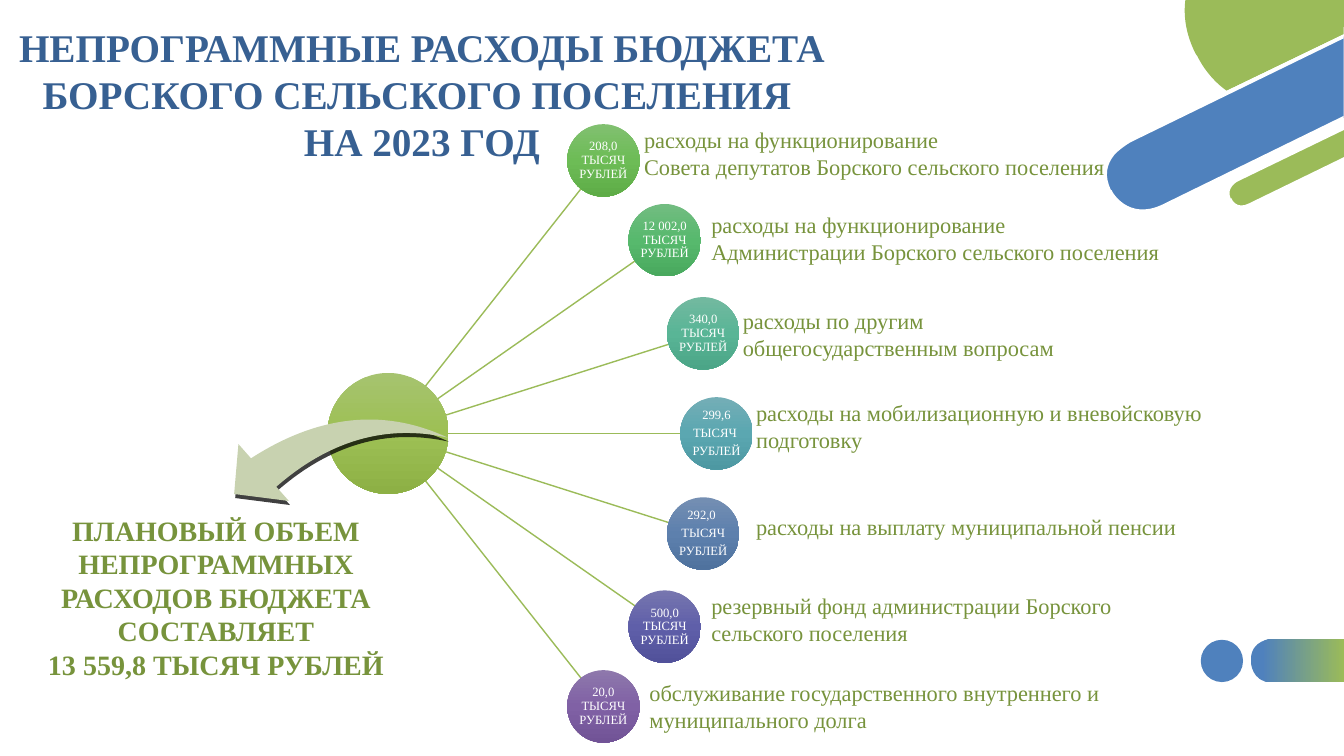
import pptx
import pptx.dml.color
import pptx.enum.shapes
import pptx.enum.text
import pptx.oxml
import pptx.oxml.ns
import pptx.util

Pt = pptx.util.Pt
SHAPE = pptx.enum.shapes.MSO_SHAPE
ALIGN = pptx.enum.text.PP_ALIGN
ANCHOR = pptx.enum.text.MSO_ANCHOR
FONT = "Times New Roman"
BLUE, GREEN, WHITE = "4F81BD", "9BBB59", "FFFFFF"
TITLE_BLUE, OLIVE, PALE_GREEN = "376092", "77933C", "C8D2B0"

TITLE = ["НЕПРОГРАММНЫЕ РАСХОДЫ БЮДЖЕТА", "БОРСКОГО СЕЛЬСКОГО ПОСЕЛЕНИЯ ", "НА 2023 ГОД"]
TOTAL = ["ПЛАНОВЫЙ ОБЪЕМ НЕПРОГРАММНЫХ РАСХОДОВ БЮДЖЕТА СОСТАВЛЯЕТ",
         "13 559,8 ТЫСЯЧ РУБЛЕЙ"]

# amount lines, gradient colours, node centre x, distance from hub level, caption left, top, lines
EXPENSES = [
    (["208,0 ТЫСЯЧ РУБЛЕЙ"], ("81C070", "6DBC56", "5EAC47"), 431, -195, 453, 86.4,
     ["расходы на функционирование", "Совета депутатов Борского сельского поселения"]),
    (["12 002,0 ТЫСЯЧ РУБЛЕЙ"], ("72BC81", "57B96D", "49A95E"), 474.8, -138, 501, 147.6,
     ["расходы на функционирование", "Администрации Борского сельского поселения"]),
    (["340,0 ТЫСЯЧ РУБЛЕЙ"], ("73B9A0", "59B596", "4BA587"), 502.3, -71.5, 523.5, 216,
     ["расходы по другим", "общегосударственным вопросам"]),
    (["299,6", "ТЫСЯЧ ", "РУБЛЕЙ"], ("74AEB6", "5BA7B1", "4D98A2"), 511.8, 0, 533, 281.5,
     ["расходы на мобилизационную и вневойсковую подготовку"]),
    (["292,0 ", "ТЫСЯЧ", "РУБЛЕЙ"], ("758FB3", "5D80AD", "4F729E"), 502.3, 71.5, 533, 363,
     ["расходы на выплату муниципальной пенсии"]),
    (["500,0 ТЫСЯЧ РУБЛЕЙ"], ("7776AF", "5F5FA9", "51519A"), 474.8, 138, 501, 419.3,
     ["резервный фонд администрации Борского сельского поселения"]),
    (["20,0 ТЫСЯЧ РУБЛЕЙ"], ("8E78AC", "8061A5", "715396"), 431, 195, 456.8, 481.7,
     ["обслуживание государственного внутреннего и муниципального долга"]),
]
HUB_X, HUB_Y, HUB_R, NODE_R = 277.2, 309.6, 43.2, 25.9
HUB_COLOURS = ("A6C36F", "9DC054", "8DB045")

# Outlines: a pair is a straight step, six numbers are a Bezier step
PILL = [(908.6, 487.4), (960, 487.4), (960, 456.5), (908.6, 456.5),
        (908.6, 456.5, 893.5, 456.5, 893.5, 471.6), (893.5, 472.3),
        (893.5, 472.3, 893.5, 487.4, 908.6, 487.4)]
CORNER = [
    (WHITE, [(959.8, 58.3), (940.3, 67.7), (917.3, 79.2, 895.7, 77.8, 877.7, 64.1),
             (863.3, 53.3, 856.1, 39.6, 856.1, 39.6), (855.4, 37.4),
             (848.9, 24.5, 846, 11.5, 848.2, 0), (845.3, 0),
             (843.1, 12.2, 846, 25.2, 852.5, 38.9), (853.9, 41),
             (853.9, 41.8, 861.1, 55.4, 875.5, 66.2),
             (884.2, 72.7, 895.7, 78.5, 910.8, 78.5),
             (919.4, 78.5, 929.5, 76.3, 941.8, 70.6), (959.8, 61.9)]),
    (BLUE, [(807.1, 100.1), (807.1, 100.1, 781.2, 113, 792.7, 136.1), (792.7, 136.8),
            (792.7, 136.8, 804.2, 159.8, 830.9, 146.9), (959.8, 84.2), (959.8, 25.9)]),
    (GREEN, [(855.4, 40.3), (855.4, 40.3, 861.8, 54.7, 876.2, 64.8), (959.8, 24.5),
             (960, 0), (846.7, 0), (845.3, 10.8, 846.7, 23.8, 853.9, 38.2)]),
    (GREEN, [(960, 90.7), (883.4, 128.2), (883.4, 128.2, 873.4, 133.2, 878.4, 141.8),
             (878.4, 142.6), (878.4, 142.6, 882.7, 151.9, 892.8, 146.9), (960, 113.8)]),
    (WHITE, [(892.1, 145.4), (883.4, 149.8, 879.8, 142.6, 879.8, 141.8), (879.1, 141.8),
             (875.5, 133.9, 884.2, 129.6, 884.2, 129.6), (960, 92.9), (960, 89.3),
             (882.7, 126.7), (882.7, 126.7, 877.7, 129.6, 876.2, 134.6),
             (874.8, 137.5, 875.5, 140.4, 877, 143.3),
             (878.4, 146.2, 882, 149.8, 887, 149.8),
             (889.2, 149.8, 891.4, 149.8, 893.5, 148.3), (960, 115.9), (960, 112.3)]),
    (WHITE, [(830.2, 146.2), (805.7, 157.7, 794.2, 136.8, 794.2, 136.1), (793.4, 135.4),
             (789.1, 126, 789.8, 118.1, 796.3, 110.2),
             (801.4, 105.1, 807.8, 101.5, 807.8, 101.5), (959.8, 27.4), (959.8, 24.5),
             (806.4, 98.6), (805.7, 99.4, 793.4, 105.1, 789.1, 117.4),
             (787, 123.1, 787.7, 129.6, 791.3, 136.8), (791.3, 137.5),
             (791.3, 137.5, 799.2, 152.6, 815.8, 152.6),
             (820.1, 152.6, 825.1, 151.2, 830.9, 148.3), (959.8, 85.7), (959.8, 82.8)]),
]


def rgb(colour):
    return pptx.dml.color.RGBColor.from_string(colour)


def drawing_xml(body):
    """Parse one DrawingML element, adding its namespace."""
    tag, rest = body.split(">", 1)
    closed = "/" if tag.endswith("/") else ""
    return pptx.oxml.parse_xml(f"{tag.rstrip('/')} {pptx.oxml.ns.nsdecls('a')}{closed}>{rest}")


def paint(sp, colour):
    sp.shadow.inherit = False
    sp.line.fill.background()
    sp.fill.solid()
    sp.fill.fore_color.rgb = rgb(colour)


def paint_gradient(sp, stops, angle):
    paint(sp, WHITE)
    marks = "".join(f'<a:gs pos="{pos * 1000}"><a:srgbClr val="{colour}"/></a:gs>'
                    for pos, colour in stops)
    solid = sp._element.spPr.find(pptx.oxml.ns.qn("a:solidFill"))
    solid.getparent().replace(solid, drawing_xml(
        f'<a:gradFill rotWithShape="1"><a:gsLst>{marks}</a:gsLst>'
        f'<a:lin ang="{angle * 60000}" scaled="0"/></a:gradFill>'))


def add_outline(steps):
    """Build a closed freeform, then bend its Bezier steps."""
    ends = [(Pt(step[-2]), Pt(step[-1])) for step in steps]
    builder = shapes.build_freeform(*ends[0])
    builder.add_line_segments(ends[1:], close=True)
    sp = builder.convert_to_shape()
    lines = list(sp._element.iter(pptx.oxml.ns.qn("a:lnTo")))
    for step, line in zip(steps[1:], lines):
        if len(step) == 6:
            points = "".join(f'<a:pt x="{Pt(x) - sp.left}" y="{Pt(y) - sp.top}"/>'
                             for x, y in zip(step[::2], step[1::2]))
            line.getparent().replace(line, drawing_xml(
                f"<a:cubicBezTo>{points}</a:cubicBezTo>"))
    return sp


def add_circle(x, y, radius):
    return shapes.add_shape(SHAPE.OVAL, Pt(x - radius), Pt(y - radius),
                            Pt(2 * radius), Pt(2 * radius))


def add_ball(x, y, radius, colours):
    sp = add_circle(x, y, radius)
    paint_gradient(sp, list(zip((0, 50, 100), colours)), 90)
    return sp


def write(tf, lines, size, colour, align, bold=False):
    tf.word_wrap = True
    for i, line in enumerate(lines):
        p = tf.paragraphs[0] if i == 0 else tf.add_paragraph()
        p.alignment = align
        r = p.add_run()
        r.text = line
        r.font.name, r.font.size, r.font.bold = FONT, Pt(size), bold
        r.font.color.rgb = rgb(colour)


def add_text(x, y, w, h, *style):
    write(shapes.add_textbox(Pt(x), Pt(y), Pt(w), Pt(h)).text_frame, *style)


prs = pptx.Presentation()
prs.slide_width, prs.slide_height = Pt(960), Pt(540)
s = prs.slides.add_slide(prs.slide_layouts[5])
shapes = s.shapes

title = shapes.title
title.left, title.top, title.width, title.height = Pt(-74.2), Pt(13), Pt(751), Pt(109)
title.text_frame.auto_size = pptx.enum.text.MSO_AUTO_SIZE.NONE
title.text_frame.vertical_anchor = ANCHOR.TOP
write(title.text_frame, TITLE, 28, TITLE_BLUE, ALIGN.CENTER, True)

paint(add_circle(872.8, 472.1, 15.1), BLUE)
paint_gradient(add_outline(PILL), [(12, BLUE), (100, GREEN)], 0)
for colour, steps in CORNER:
    paint(add_outline(steps), colour)

add_text(20, 363, 268.5, 128, TOTAL, 20, OLIVE, ALIGN.CENTER, True)

for _, _, x, dy, *_ in EXPENSES:
    ray = shapes.add_connector(pptx.enum.shapes.MSO_CONNECTOR.STRAIGHT,
                               Pt(HUB_X), Pt(HUB_Y), Pt(x), Pt(HUB_Y + dy))
    ray.line.color.rgb = rgb(GREEN)
    ray.line.width = Pt(1)
    ray._element.spPr.append(drawing_xml("<a:effectLst/>"))
add_ball(HUB_X, HUB_Y, HUB_R, HUB_COLOURS)

for amount, colours, x, dy, left, top, caption in EXPENSES:
    tf = add_ball(x, HUB_Y + dy, NODE_R, colours).text_frame
    tf.margin_left = tf.margin_right = tf.margin_top = tf.margin_bottom = Pt(0.7)
    tf.vertical_anchor = ANCHOR.MIDDLE
    write(tf, amount, 9, WHITE, ALIGN.CENTER)
    for p in tf.paragraphs:
        p.line_spacing, p.space_after = 0.9, Pt(3.15)
    height = 26.6 if len(caption[0]) < 40 and len(caption) == 1 else 46
    add_text(left, top, 351.5, height, caption, 16, OLIVE, ALIGN.LEFT)

arrow = shapes.add_shape(SHAPE.SWOOSH_ARROW, Pt(169.5), Pt(271.5), Pt(132), Pt(108))
paint(arrow, PALE_GREEN)
arrow.adjustments[0] = arrow.adjustments[1] = 0.25
arrow.rotation = 132
arrow._element.spPr.xfrm.set("flipV", "1")
arrow._element.spPr.find(pptx.oxml.ns.qn("a:effectLst")).append(drawing_xml(
    '<a:outerShdw blurRad="0" dist="38100" dir="4500000" algn="tl" rotWithShape="0">'
    '<a:srgbClr val="000000"><a:alpha val="75000"/></a:srgbClr></a:outerShdw>'))

prs.save("out.pptx")
